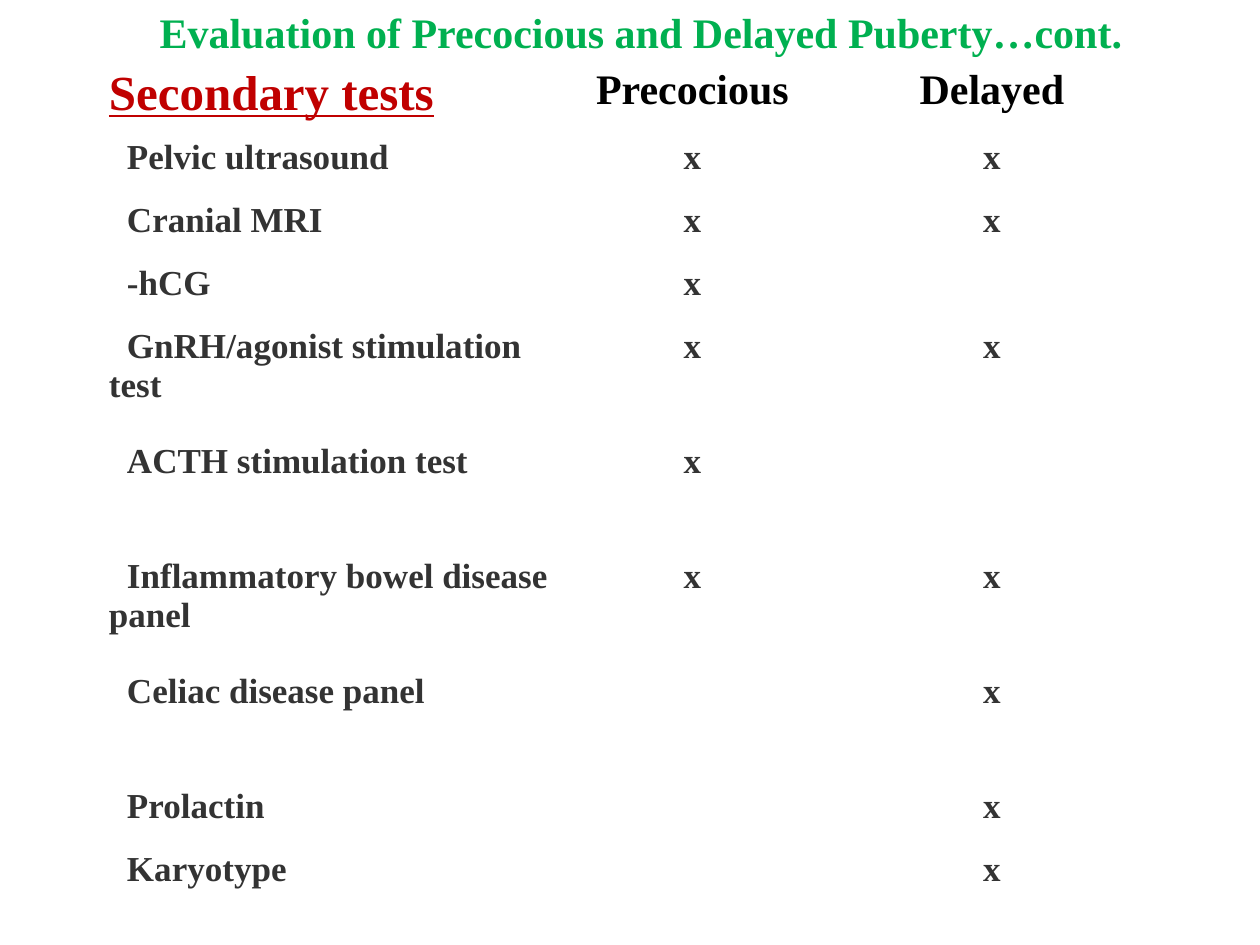
"""Build a slide that tabulates secondary tests for precocious and delayed puberty."""
from dataclasses import dataclass

from pptx import Presentation
from pptx.dml.color import RGBColor
from pptx.enum.text import MSO_ANCHOR, MSO_AUTO_SIZE, PP_ALIGN
from pptx.util import Emu, Pt

LEFT, CENTER = PP_ALIGN.LEFT, PP_ALIGN.CENTER
TOP = MSO_ANCHOR.TOP
GROW = MSO_AUTO_SIZE.SHAPE_TO_FIT_TEXT
TITLE_ONLY = 5
PX_PER_INCH = 126
FONT = "Times New Roman"
COLORS = {
    "title": "00B050",
    "heading": "C00000",
    "column": "000000",
    "body": "333333",
    "cell": "FFFFFF",
}
COLUMN_WIDTHS = (472, 231, 368)
HEADER_HEIGHT, ROW_HEIGHT, TALL_ROW_HEIGHT = 71, 63, 115
CELL_MARGIN = 4
NAME_INDENT = 18


@dataclass(frozen=True)
class Style:
    size: int
    color: str
    underline: bool = False


@dataclass(frozen=True)
class Test:
    name: str
    precocious: bool
    delayed: bool
    height: int = ROW_HEIGHT


TITLE = Style(24, "title")
HEADING = Style(28, "heading", underline=True)
COLUMN = Style(24, "column")
BODY = Style(20, "body")

TESTS = (
    Test("Pelvic ultrasound", True, True),
    Test("Cranial MRI", True, True),
    Test("-hCG", True, False),
    Test("GnRH/agonist stimulation test", True, True, TALL_ROW_HEIGHT),
    Test("ACTH stimulation test", True, False, TALL_ROW_HEIGHT),
    Test("Inflammatory bowel disease panel", True, True, TALL_ROW_HEIGHT),
    Test("Celiac disease panel", False, True, TALL_ROW_HEIGHT),
    Test("Prolactin", False, True),
    Test("Karyotype", False, True),
)


def px(length: int) -> Emu:
    """Convert pixels to EMU."""
    return Emu(round(length * 914400 / PX_PER_INCH))


def write(frame, text: str, style: Style, align=LEFT, indent: int = 0) -> None:
    """Write one styled run into the first paragraph of a text frame."""
    para = frame.paragraphs[0]
    para.alignment = align
    if indent:
        properties = para._p.get_or_add_pPr()
        properties.set("marL", "0")
        properties.set("indent", str(px(indent)))
    span = para.add_run()
    span.text = text
    span.font.name = FONT
    span.font.size = Pt(style.size)
    span.font.bold = True
    span.font.underline = style.underline
    span.font.color.rgb = RGBColor.from_string(COLORS[style.color])


def add_title(page, text: str) -> None:
    """Place and fill the title placeholder."""
    title = page.shapes.title
    title.left, title.top, title.width, title.height = px(147), px(0), px(1061), px(63)
    frame = title.text_frame
    frame.word_wrap = True
    frame.auto_size = GROW
    frame.vertical_anchor = TOP
    write(frame, text, TITLE)


def prepare_cell(cell) -> None:
    """Give a cell its plain fill and narrow margins."""
    cell.fill.solid()
    cell.fill.fore_color.rgb = RGBColor.from_string(COLORS["cell"])
    cell.margin_left = cell.margin_right = px(CELL_MARGIN)
    cell.margin_top = cell.margin_bottom = px(CELL_MARGIN)
    cell.vertical_anchor = TOP


def add_test_table(page, tests: tuple[Test, ...]) -> None:
    """Add the table with one row per test under a heading row."""
    heights = (HEADER_HEIGHT, *(test.height for test in tests))
    table = page.shapes.add_table(
        len(heights), len(COLUMN_WIDTHS),
        px(105), px(63), px(sum(COLUMN_WIDTHS)), px(sum(heights)),
    ).table
    table.first_row = table.horz_banding = False
    for column, width in zip(table.columns, COLUMN_WIDTHS):
        column.width = px(width)
    for row, height in zip(table.rows, heights):
        row.height = px(height)
    for cell in table.iter_cells():
        prepare_cell(cell)

    write(table.cell(0, 0).text_frame, "Secondary tests", HEADING)
    for index, label in enumerate(("Precocious", "Delayed"), start=1):
        write(table.cell(0, index).text_frame, label, COLUMN, CENTER)
    for row, test in enumerate(tests, start=1):
        write(table.cell(row, 0).text_frame, test.name, BODY, indent=NAME_INDENT)
        for index, marked in enumerate((test.precocious, test.delayed), start=1):
            if marked:
                write(table.cell(row, index).text_frame, "x", BODY, CENTER)


def main() -> None:
    """Build and save the deck."""
    deck = Presentation()
    deck.slide_width, deck.slide_height = px(1260), px(945)
    page = deck.slides.add_slide(deck.slide_layouts[TITLE_ONLY])
    add_title(page, "Evaluation of Precocious and Delayed Puberty…cont.")
    add_test_table(page, TESTS)
    deck.save("out.pptx")


if __name__ == "__main__":
    main()
